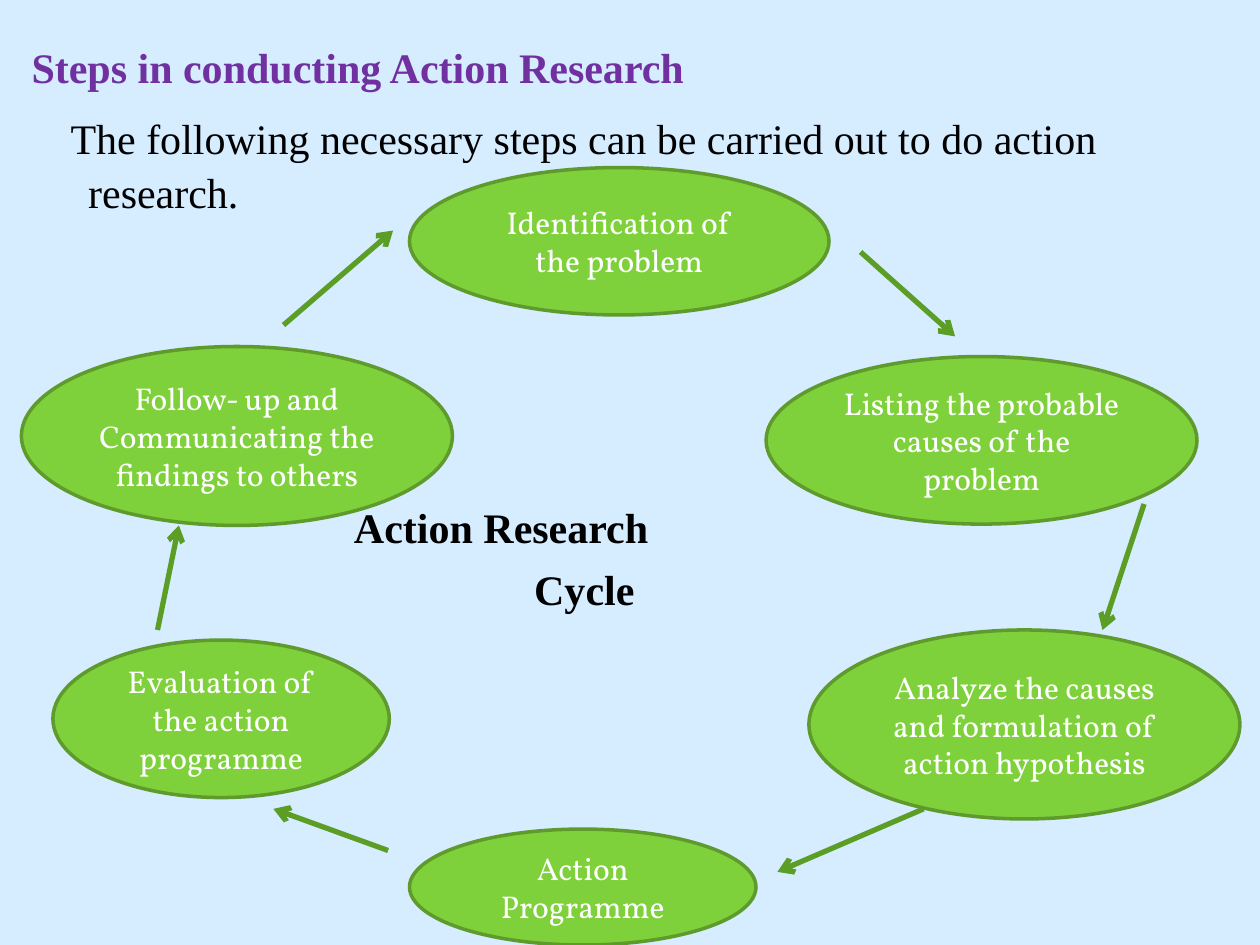
from pptx import Presentation
from pptx.dml.color import RGBColor
from pptx.enum.shapes import MSO_CONNECTOR, MSO_SHAPE
from pptx.enum.text import MSO_ANCHOR, PP_ALIGN
from pptx.oxml.ns import qn
from pptx.util import Inches, Pt
from lxml.etree import SubElement

SERIF, BODY = "Times New Roman", "Vollkorn"

STEPS = [
    ("Identification of the problem", (3.25, 1.33, 3.33, 1.17)),
    ("Listing the probable causes of the problem", (6.08, 2.83, 3.42, 1.33)),
    ("Analyze the causes and formulation of action hypothesis", (6.42, 5, 3.42, 1.5)),
    ("Action Programme", (3.25, 6.58, 2.75, 0.92)),
    ("Evaluation of the action programme", (0.42, 5.08, 2.67, 1.25)),
    ("Follow- up and Communicating the findings to others", (0.17, 2.75, 3.42, 1.42)),
]

# Each arrow leads from one step to the next: start x, y, end x, y
ARROWS = [
    (6.83, 2, 7.58, 2.67),
    (9.08, 4, 8.75, 5),
    (7.33, 6.42, 6.17, 6.92),
    (3.08, 6.75, 2.17, 6.42),
    (1.25, 5, 1.42, 4.17),
    (2.25, 2.58, 3.12, 1.83),
]


def color(hex_code):
    return RGBColor.from_string(hex_code)


def write(paragraph, text, font=SERIF, size=24, ink="000000", bold=False,
          align=PP_ALIGN.LEFT, margin=0, indent=0, before=0, spacing=None):
    run = paragraph.add_run()
    run.text = text
    run.font.name, run.font.size, run.font.bold = font, Pt(size), bold
    run.font.color.rgb = color(ink)
    paragraph.alignment = align
    paragraph.space_before = Pt(before)
    if spacing:
        paragraph.line_spacing = spacing
    props = paragraph._p.get_or_add_pPr()
    props.set("marL", str(Inches(margin)))
    props.set("indent", str(Inches(indent)))


def text_frame(slide, box):
    frame = slide.shapes.add_textbox(*map(Inches, box)).text_frame
    frame.word_wrap = True
    frame.margin_left = frame.margin_right = 0
    frame.margin_top = frame.margin_bottom = 0
    return frame


def add_heading(slide, box):
    left, top, width, height = box
    title = text_frame(slide, (left, top, width, 0.4))
    write(title.paragraphs[0], "Steps in conducting Action Research",
          ink="7030A0", bold=True)
    intro = text_frame(slide, (left, top + 0.53, width, height - 0.53))
    write(intro.paragraphs[0],
          "The following necessary steps can be carried out to do action research.",
          margin=0.45, indent=-0.14, spacing=1.08)


def add_cycle_name(slide, box):
    frame = text_frame(slide, box)
    write(frame.paragraphs[0], "Action Research", bold=True)
    write(frame.add_paragraph(), "Cycle", bold=True, margin=1.43, before=6.7)


def add_step(slide, label, box):
    step = slide.shapes.add_shape(MSO_SHAPE.OVAL, *map(Inches, box))
    step.shadow.inherit = False
    step.fill.solid()
    step.fill.fore_color.rgb = color("7FD13B")
    step.line.color.rgb = color("5E9B2C")
    step.line.width = Pt(2)
    step.text_frame.word_wrap = True
    step.text_frame.vertical_anchor = MSO_ANCHOR.MIDDLE
    write(step.text_frame.paragraphs[0], label, font=BODY, size=18,
          ink="FFFFFF", align=PP_ALIGN.CENTER)


def add_arrow(slide, ends):
    arrow = slide.shapes.add_connector(MSO_CONNECTOR.STRAIGHT, *map(Inches, ends))
    arrow.line.color.rgb = color("5C9D25")
    arrow.line.width = Pt(3)
    SubElement(arrow.line._get_or_add_ln(), qn("a:tailEnd"), type="arrow")
    SubElement(arrow._element.spPr, qn("a:effectLst"))


def main():
    prs = Presentation()
    prs.slide_width, prs.slide_height = Inches(10), Inches(7.5)
    slide = prs.slides.add_slide(prs.slide_layouts[6])
    slide.background.fill.solid()
    slide.background.fill.fore_color.rgb = color("D6ECFF")

    # Heading and centre label
    add_heading(slide, (0.25, 0.33, 9.55, 1.4))
    add_cycle_name(slide, (2.81, 3.98, 3, 0.9))

    # Cycle of steps
    for label, box in STEPS:
        add_step(slide, label, box)
    for ends in ARROWS:
        add_arrow(slide, ends)

    prs.save("out.pptx")


if __name__ == "__main__":
    main()
